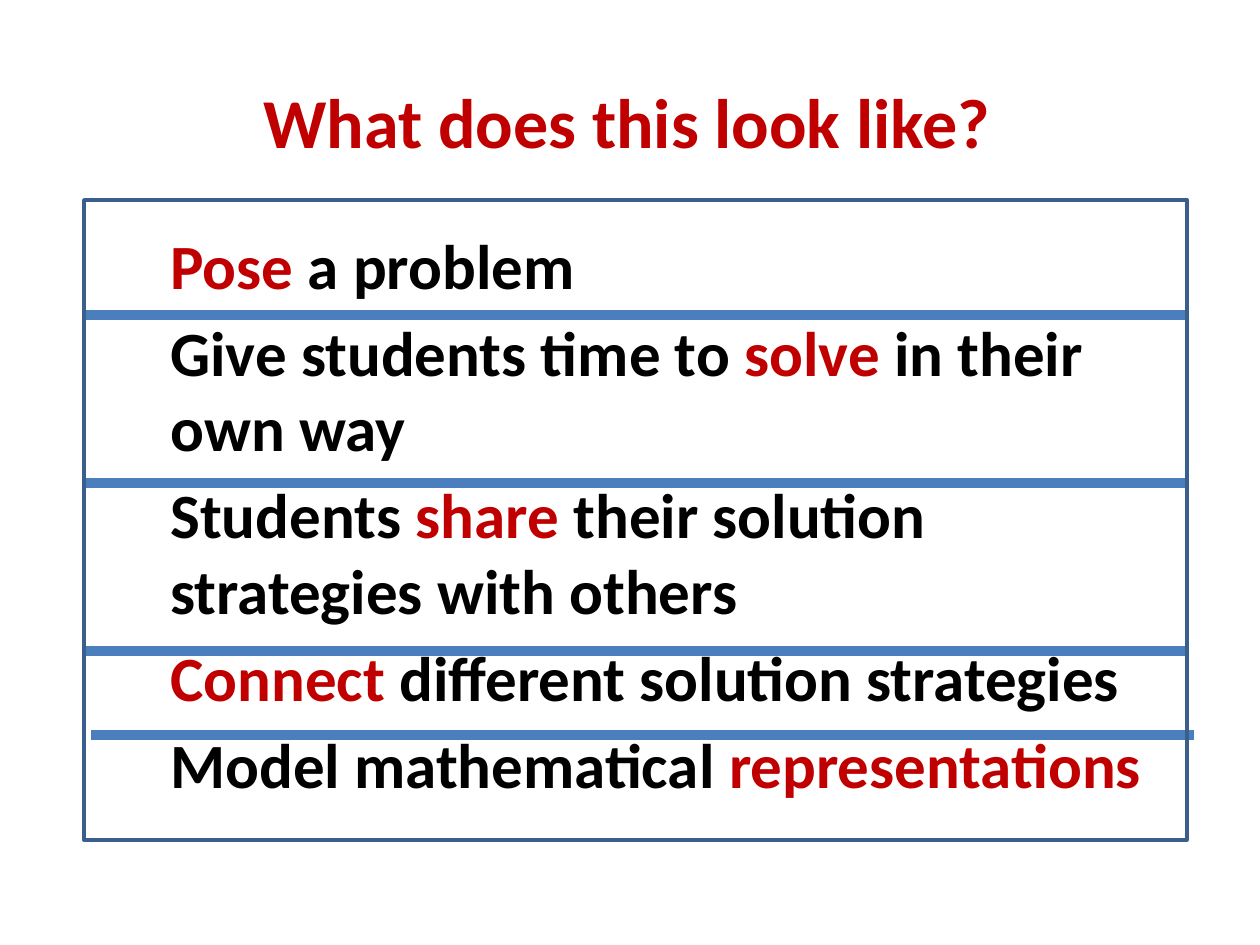
from pptx import Presentation
from pptx.dml.color import RGBColor
from pptx.enum.shapes import MSO_CONNECTOR, MSO_SHAPE
from pptx.enum.text import MSO_ANCHOR, PP_ALIGN
from pptx.oxml.ns import qn
from pptx.util import Pt
from lxml.etree import SubElement

# Content: each line is a list of (text, colour) runs
TITLE = [[("What does this look like?", "red")]]
STEPS = [
    [("Pose", "red"), (" a problem", "black")],
    [("Give students time to ", "black"), ("solve", "red"),
     (" in their own way", "black")],
    [("Students ", "black"), ("share ", "red"),
     ("their solution strategies with others", "black")],
    [("Connect ", "red"), ("different solution strategies", "black")],
    [("Model mathematical ", "black"), ("representations", "red")],
]
COLORS = {"red": "C00000", "black": "000000", "rule": "4B7EBC", "edge": "3A5F8C"}

# Places in px, 126 to the inch
SCALE = 914400 / 126
FRAME = (84, 200, 1103, 640)
RULES = [(0, 315), (0, 483), (0, 651), (7, 735)]  # shift from frame, height


def emu(*vals):
    return [round(v * SCALE) for v in vals]


def tint(name):
    return RGBColor.from_string(COLORS[name])


def style(obj, form):
    for key, val in form.items():
        setattr(obj, key, val)


def stroke(line, name, width):
    line.color.rgb = tint(name)
    line.width = Pt(width)


def write(slide, place, lines, size, frame, para):
    box = slide.shapes.add_textbox(*emu(*place)).text_frame
    style(box, {"word_wrap": True, **frame})
    for i, runs in enumerate(lines):
        par = box.paragraphs[0] if i == 0 else box.add_paragraph()
        style(par, para if i else {**para, "space_before": Pt(0)})
        for text, name in runs:
            run = par.add_run()
            run.text = text
            style(run.font, {"name": "Calibri", "size": Pt(size), "bold": True})
            run.font.color.rgb = tint(name)


def main():
    deck = Presentation()
    deck.slide_width, deck.slide_height = emu(1260, 945)
    slide = deck.slides.add_slide(deck.slide_layouts[6])

    # Title and steps
    write(slide, (231, 42, 792, 157), TITLE, 40,
          {"vertical_anchor": MSO_ANCHOR.MIDDLE}, {"alignment": PP_ALIGN.CENTER})
    write(slide, (158, 220, 1039, 630), STEPS, 36,
          {"vertical_anchor": MSO_ANCHOR.TOP},
          {"alignment": PP_ALIGN.LEFT, "space_before": Pt(6.5)})

    # Rules between the steps
    left, _, wide, _ = FRAME
    for shift, y in RULES:
        start = left + shift
        rule = slide.shapes.add_connector(
            MSO_CONNECTOR.STRAIGHT, *emu(start, y, start + wide, y))
        stroke(rule.line, "rule", 6)
        SubElement(rule._element.spPr, qn("a:effectLst"))

    # Frame around the steps
    frame = slide.shapes.add_shape(MSO_SHAPE.RECTANGLE, *emu(*FRAME))
    frame.shadow.inherit = False
    frame.fill.background()
    stroke(frame.line, "edge", 2)

    deck.save("out.pptx")


if __name__ == "__main__":
    main()
